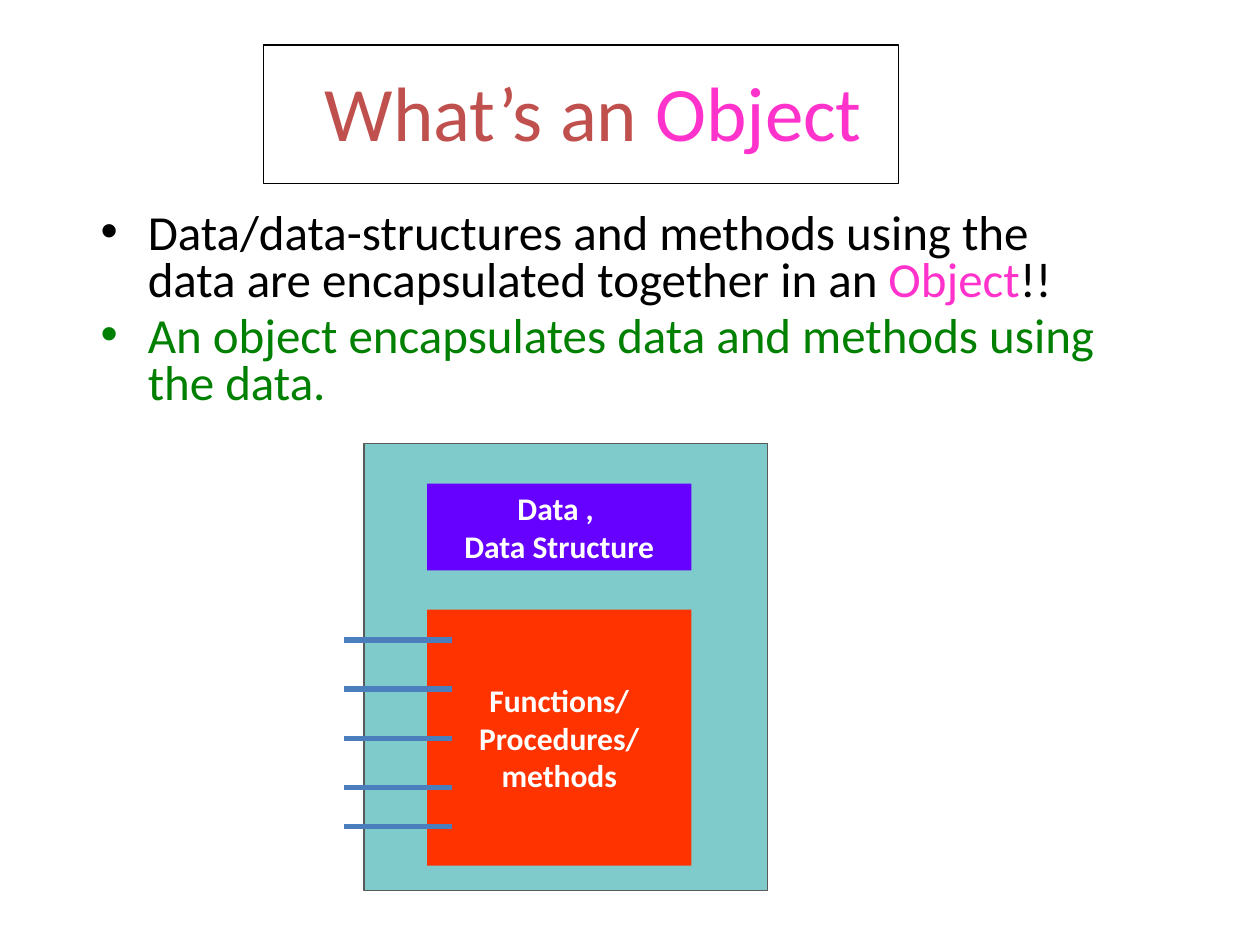
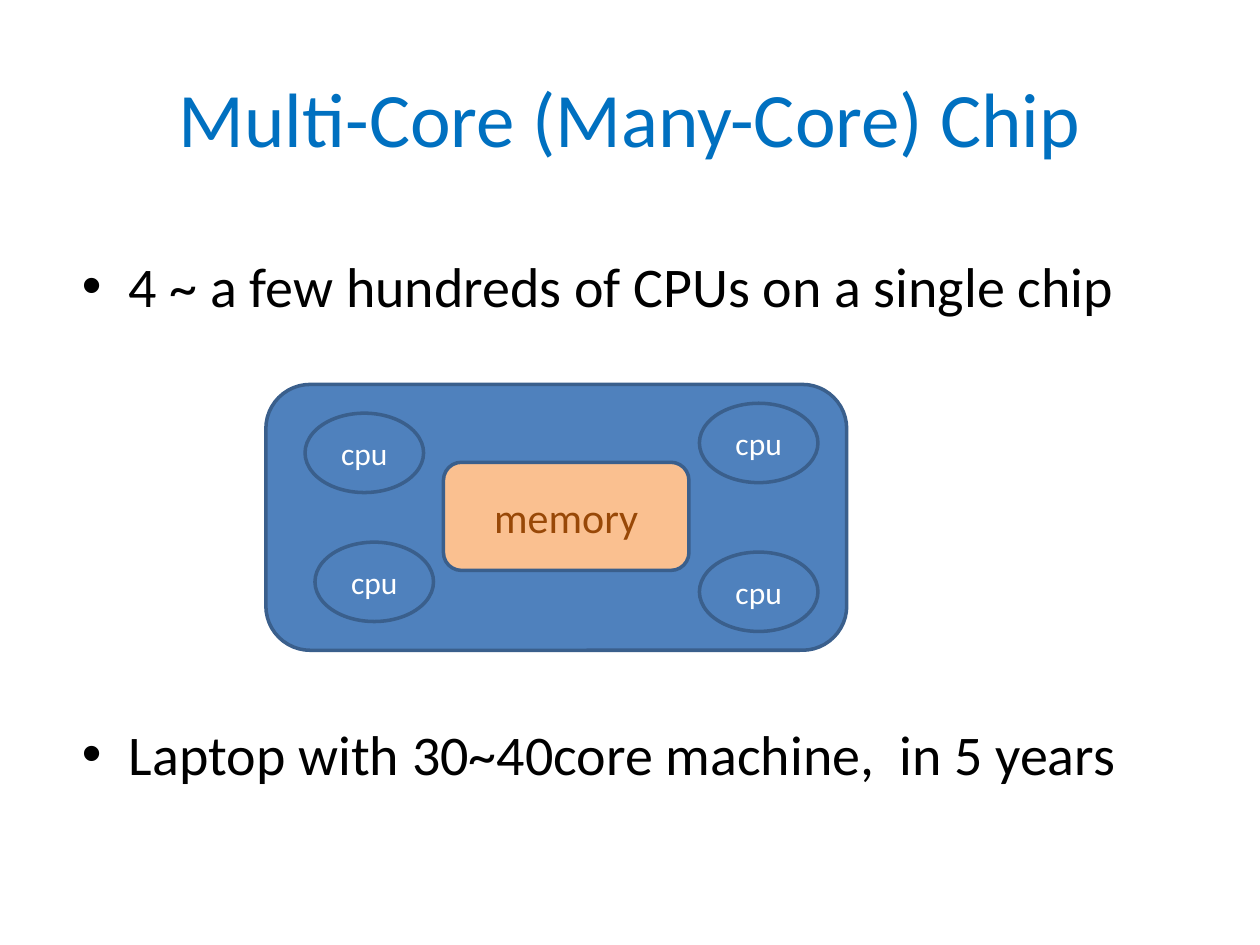
from lxml import etree
from pptx import Presentation
from pptx.dml.color import RGBColor
from pptx.enum.shapes import MSO_CONNECTOR, MSO_SHAPE
from pptx.enum.text import MSO_ANCHOR, PP_ALIGN
from pptx.oxml.ns import qn
from pptx.util import Cm, Pt

RECT = MSO_SHAPE.RECTANGLE
ROUNDED = MSO_SHAPE.ROUNDED_RECTANGLE
OVAL = MSO_SHAPE.OVAL
STRAIGHT = MSO_CONNECTOR.STRAIGHT
MIDDLE = MSO_ANCHOR.MIDDLE
CENTER = PP_ALIGN.CENTER

FONT = "Calibri"
BLACK = RGBColor(0x00, 0x00, 0x00)
WHITE = RGBColor(0xFF, 0xFF, 0xFF)
BRICK = RGBColor(0xC0, 0x50, 0x4D)
PINK = RGBColor(0xFF, 0x33, 0xCC)
GREEN = RGBColor(0x00, 0x80, 0x00)
TEAL = RGBColor(0x00, 0x99, 0x99)
GRAY = RGBColor(0x59, 0x59, 0x59)
VIOLET = RGBColor(0x66, 0x00, 0xFF)
RED = RGBColor(0xFF, 0x33, 0x00)
LINK_BLUE = RGBColor(0x4B, 0x7E, 0xBC)
TITLE_BLUE = RGBColor(0x00, 0x70, 0xC0)
CHIP_BLUE = RGBColor(0x4F, 0x81, 0xBD)
EDGE_BLUE = RGBColor(0x3A, 0x5F, 0x8C)
PEACH = RGBColor(0xFA, 0xC0, 0x90)
BROWN = RGBColor(0x98, 0x48, 0x07)


def lengths(box):
    return [Cm(value) for value in box]


def within(outer, left, top, width, height):
    return outer[0] + left, outer[1] + top, width, height


def add_runs(paragraph, runs, size, bold=False):
    for text, color in runs:
        run = paragraph.add_run()
        run.text = text
        run.font.name = FONT
        run.font.size = Pt(size)
        run.font.bold = bold
        run.font.color.rgb = color


def add_paragraphs(frame, count):
    return [frame.paragraphs[0]] + [frame.add_paragraph() for _ in range(count - 1)]


def add_title(slide, box, runs):
    frame = slide.shapes.add_textbox(*lengths(box)).text_frame
    frame.word_wrap = True
    frame.vertical_anchor = MIDDLE
    frame.paragraphs[0].alignment = CENTER
    add_runs(frame.paragraphs[0], runs, 44)


def add_bullets(slide, box, items, size, gaps, line_spacing=1.0):
    frame = slide.shapes.add_textbox(*lengths(box)).text_frame
    frame.word_wrap = True
    for paragraph, runs, gap in zip(add_paragraphs(frame, len(items)), items, gaps):
        paragraph.space_before = Pt(gap)
        paragraph.line_spacing = line_spacing
        properties = paragraph._p.get_or_add_pPr()
        properties.set("marL", str(Cm(0.95)))
        properties.set("indent", str(-Cm(0.95)))
        etree.SubElement(properties, qn("a:buFont"), typeface="Arial")
        etree.SubElement(properties, qn("a:buChar"), char="•")
        add_runs(paragraph, runs, size)


def add_block(slide, kind, box, fill=None, edge=None, edge_width=0.75):
    block = slide.shapes.add_shape(kind, *lengths(box))
    block.shadow.inherit = False
    if fill is None:
        block.fill.background()
    else:
        block.fill.solid()
        block.fill.fore_color.rgb = fill
    if edge is None:
        block.line.fill.background()
    else:
        block.line.color.rgb = edge
        block.line.width = Pt(edge_width)
    return block


def add_label(block, lines, size, color, bold=False, wrap=True):
    frame = block.text_frame
    frame.word_wrap = wrap
    frame.vertical_anchor = MIDDLE
    for paragraph, text in zip(add_paragraphs(frame, len(lines)), lines):
        paragraph.alignment = CENTER
        add_runs(paragraph, [(text, color)], size, bold)


def make_translucent(block, percent):
    color = block._element.spPr.find(qn("a:solidFill"))[0]
    etree.SubElement(color, qn("a:alpha"), val=str(percent * 1000))


def add_method_link(slide, left, right, y):
    link = slide.shapes.add_connector(STRAIGHT, Cm(left), Cm(y), Cm(right), Cm(y))
    link.line.color.rgb = LINK_BLUE
    link.line.width = Pt(3)
    etree.SubElement(link._element.spPr, qn("a:effectLst"))


def draw_object(slide, box):
    make_translucent(add_block(slide, RECT, box, TEAL, GRAY), 50)
    parts = [
        (0.81, 1.75, VIOLET, ["Data , ", "Data Structure"]),
        (3.35, 5.16, RED, ["Functions/", "Procedures/", "methods"]),
    ]
    for top, height, fill, lines in parts:
        part = add_block(slide, RECT, within(box, 1.27, top, 5.33, height), fill)
        add_label(part, lines, 18, WHITE, bold=True, wrap=False)
    for offset in (3.96, 4.95, 5.94, 6.93, 7.72):
        add_method_link(slide, box[0] - 0.41, box[0] + 1.78, box[1] + offset)


def draw_chip(slide, box):
    add_block(slide, ROUNDED, box, CHIP_BLUE, EDGE_BLUE, 2)
    memory = add_block(slide, ROUNDED, within(box, 3.58, 1.57, 4.95, 2.18),
                       PEACH, EDGE_BLUE, 2)
    add_label(memory, ["memory"], 24, BROWN)
    for left, top in ((0.79, 0.58), (0.99, 3.18), (8.74, 0.38), (8.74, 3.38)):
        cpu = add_block(slide, OVAL, within(box, left, top, 2.39, 1.6),
                        CHIP_BLUE, EDGE_BLUE, 2)
        add_label(cpu, ["cpu"], 18, WHITE)


def build_object_slide(slide):
    add_title(slide, (4.24, 0.64, 15.44, 3.18),
              [("What’s an ", BRICK), ("Object", PINK)])
    add_bullets(slide, (1.78, 4.17, 21.08, 4.57), [
        [("Data/data-structures and methods using the data are "
          "encapsulated together in an ", BLACK), ("Object", PINK), ("!!", BLACK)],
        [("An object encapsulates data and methods using the data.", GREEN)],
    ], 28, (5, 5), 0.8)
    draw_object(slide, (7.34, 8.94, 8.13, 9.02))
    add_block(slide, RECT, (5.31, 0.91, 12.8, 2.79), edge=BLACK)


def build_chip_slide(slide):
    add_title(slide, (1.27, 0.76, 22.86, 3.18),
              [("Multi-Core (Many-Core) Chip", TITLE_BLUE)])
    add_bullets(slide, (1.4, 4.95, 22.86, 12.57), [
        [("4 ~ a few hundreds of CPUs on a single chip", BLACK)],
        [("Laptop with 30~40core machine,  in 5 years", BLACK)],
    ], 32, (5.6, 229))
    draw_chip(slide, (5.36, 7.75, 11.71, 5.36))


def main():
    deck = Presentation()
    deck.slide_width, deck.slide_height = Cm(25.4), Cm(19.05)
    blank = deck.slide_layouts[6]
    for build in (build_object_slide, build_chip_slide):
        build(deck.slides.add_slide(blank))
    deck.save("out.pptx")


if __name__ == "__main__":
    main()
